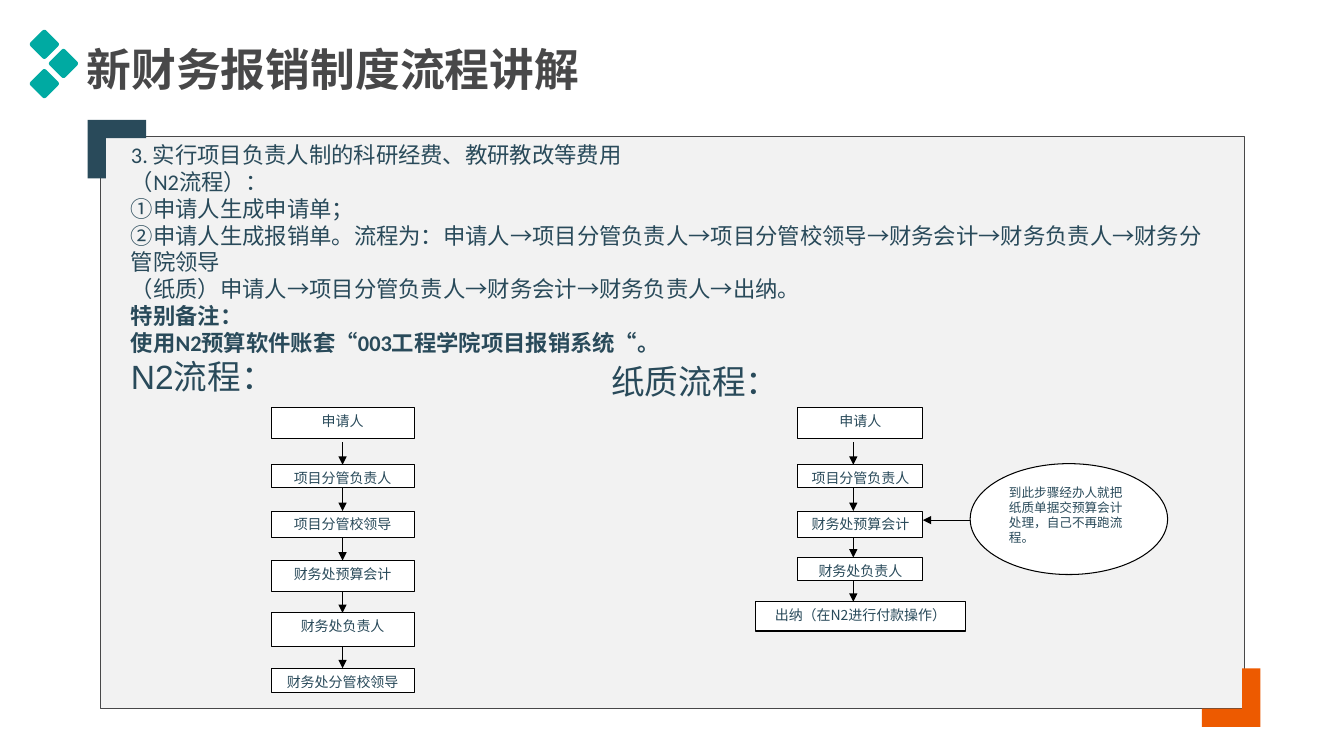
from pptx import Presentation
from pptx.dml.color import RGBColor
from pptx.enum.shapes import MSO_CONNECTOR, MSO_SHAPE
from pptx.enum.text import MSO_ANCHOR, MSO_AUTO_SIZE, PP_ALIGN
from pptx.oxml.ns import qn
from pptx.util import Inches, Pt
from lxml import etree

STRAIGHT = MSO_CONNECTOR.STRAIGHT
RECTANGLE, OVAL = MSO_SHAPE.RECTANGLE, MSO_SHAPE.OVAL
ROUNDED = MSO_SHAPE.ROUNDED_RECTANGLE
TOP, MIDDLE = MSO_ANCHOR.TOP, MSO_ANCHOR.MIDDLE
LEFT, CENTER = PP_ALIGN.LEFT, PP_ALIGN.CENTER
NO_FIT = MSO_AUTO_SIZE.NONE

COLORS = {
    "title": "484849", "teal": "00AAA2", "panel": "F2F2F2", "navy": "294A5A",
    "orange": "ED5A00", "white": "FFFFFF", "black": "000000",
}
CJK = "Noto Sans CJK SC"
LINE_PITCH = 1.2
ARROW_GAP = 0.04

POLICY = [
    ("3. 实行项目负责人制的科研经费、教研教改等费用", 16, "Calibri", False),
    ("（N2流程）：", 16, "Calibri", False),
    ("①申请人生成申请单；", 16, "Calibri", False),
    ("②申请人生成报销单。流程为：申请人→项目分管负责人→项目分管校领导→财务会计→财务负责人→财务分管院领导",
     16, "Calibri", False),
    ("（纸质）申请人→项目分管负责人→财务会计→财务负责人→出纳。", 16, "Calibri", False),
    ("特别备注：", 16, "Calibri", True),
    ("使用N2预算软件账套“003工程学院项目报销系统“。", 16, "Calibri", True),
    ("N2流程：", 24, "Arial", False),
]
SYSTEM_STEPS = [
    ("申请人", 0, 0.31, 1.42), ("项目分管负责人", 0.57, 0.23, 1.42),
    ("项目分管校领导", 1.03, 0.26, 1.42), ("财务处预算会计", 1.52, 0.31, 1.42),
    ("财务处负责人", 2.04, 0.33, 1.42), ("财务处分管校领导", 2.59, 0.24, 1.42),
]
PAPER_STEPS = [
    ("申请人", 0, 0.31, 1.24), ("项目分管负责人", 0.57, 0.23, 1.24),
    ("财务处预算会计", 1.03, 0.26, 1.24), ("财务处负责人", 1.49, 0.23, 1.24),
    ("出纳（在N2进行付款操作）", 1.93, 0.29, 2.09),
]


def color(name):
    return RGBColor.from_string(COLORS[name])


def place(holder, box):
    holder.left, holder.top, holder.width, holder.height = map(Inches, box)


def paint(shape, fill, line=None):
    shape.shadow.inherit = False
    shape.fill.solid()
    shape.fill.fore_color.rgb = color(fill)
    if line:
        shape.line.color.rgb = color(line)
        shape.line.width = Pt(0.75)
    else:
        shape.line.fill.background()


def write(paragraph, text, size, font=CJK, bold=False, ink="navy", align=LEFT):
    paragraph.alignment = align
    paragraph.space_before = Pt(0)
    paragraph.line_spacing = Pt(size * LINE_PITCH)
    run = paragraph.add_run()
    run.text = text
    run.font.size = Pt(size)
    run.font.name = font
    run.font.bold = bold
    run.font.color.rgb = color(ink)
    east_asian = etree.SubElement(run.font._element, qn("a:ea"))
    east_asian.set("typeface", CJK)


def prepare(frame, anchor=TOP):
    frame.word_wrap = True
    frame.auto_size = NO_FIT
    frame.vertical_anchor = anchor


def add_box(slide, kind, box, text, size, align):
    shape = slide.shapes.add_shape(kind, *map(Inches, box))
    paint(shape, "white", "black")
    prepare(shape.text_frame)
    write(shape.text_frame.paragraphs[0], text, size, align=align)
    return shape


def add_arrow(slide, start, end):
    arrow = slide.shapes.add_connector(STRAIGHT, *map(Inches, start + end))
    arrow.line.color.rgb = color("black")
    arrow.line.width = Pt(0.75)
    head = etree.SubElement(arrow.line._get_or_add_ln(), qn("a:tailEnd"))
    head.set("type", "triangle")
    etree.SubElement(arrow._element.spPr, qn("a:effectLst"))
    return arrow


def add_heading(slide, box):
    left, top, width, height = box
    title = slide.shapes.title
    place(title, (left + 0.47, top + 0.07, width - 0.47, 0.64))
    prepare(title.text_frame, MIDDLE)
    write(title.text_frame.paragraphs[0], "新财务报销制度流程讲解", 32,
          bold=True, ink="title")
    side = 0.22
    for center_x, center_y in ((0.15, 0.15), (0.34, 0.34), (0.15, 0.54)):
        diamond = slide.shapes.add_shape(
            ROUNDED, Inches(left + center_x - side / 2),
            Inches(top + center_y - side / 2), Inches(side), Inches(side))
        diamond.adjustments[0] = 0.12
        diamond.rotation = 45
        paint(diamond, "teal")


def add_bracket(slide, corner_x, corner_y, direction, fill):
    arm, thick = 0.58, 0.18
    outline = [(0, 0), (arm, 0), (arm, thick), (thick, thick), (thick, arm), (0, arm)]
    points = [(Inches(corner_x + direction * x), Inches(corner_y + direction * y))
              for x, y in outline]
    builder = slide.shapes.build_freeform(*points[0])
    builder.add_line_segments(points[1:], close=True)
    paint(builder.convert_to_shape(), fill)


def add_policy_panel(slide, box):
    left, top, width, height = box
    policy = slide.placeholders[1]
    panel = slide.shapes.add_shape(RECTANGLE, *map(Inches, box))
    paint(panel, "panel", "title")
    policy.element.addprevious(panel.element)
    place(policy, (left + 0.2, top, width - 0.43, height - 0.09))
    frame = policy.text_frame
    prepare(frame)
    for index, (text, size, font, bold) in enumerate(POLICY):
        paragraph = frame.add_paragraph() if index else frame.paragraphs[0]
        write(paragraph, text, size, font, bold)
        properties = paragraph._p.get_or_add_pPr()
        properties.set("marL", "0")
        properties.set("indent", "0")
        etree.SubElement(properties, qn("a:buNone"))
    add_bracket(slide, left - 0.13, top - 0.16, 1, "navy")
    add_bracket(slide, left + width + 0.16, top + height + 0.18, -1, "orange")


def add_flow(slide, box, steps, arrow_shift=0):
    left, top, width, height = box
    center = left + width / 2
    arrow_x = center + arrow_shift
    previous, bottom = None, top
    for text, offset, step_height, step_width in steps:
        step_top = top + offset
        step = add_box(slide, RECTANGLE,
                       (center - step_width / 2, step_top, step_width, step_height),
                       text, 10, CENTER)
        if previous:
            is_first = bottom == top + steps[0][2]
            start_y = bottom + ARROW_GAP if is_first else bottom
            arrow = add_arrow(slide, (arrow_x, start_y), (arrow_x, step_top))
            if not arrow_shift:
                arrow.end_connect(step, 0)
                if not is_first:
                    arrow.begin_connect(previous, 2)
        previous, bottom = step, step_top + step_height


def add_paper_flow(slide, box):
    left, top, width, height = box
    heading = slide.shapes.add_textbox(*map(Inches, (left - 1.95, top - 0.51, 4.37, 0.5)))
    prepare(heading.text_frame)
    write(heading.text_frame.paragraphs[0], "纸质流程：", 24, "Arial")
    add_flow(slide, box, PAPER_STEPS, -0.07)
    note_left, arrow_y = left + width + 0.47, top + 1.12
    add_box(slide, OVAL, (note_left, top + 0.56, 1.96, 1.1),
            "到此步骤经办人就把纸质单据交预算会计处理，自己不再跑流程。", 9, LEFT)
    add_arrow(slide, (note_left, arrow_y), (left + width, arrow_y))


def main():
    deck = Presentation()
    deck.slide_width, deck.slide_height = Inches(13.34), Inches(7.5)
    slide = deck.slides.add_slide(deck.slide_layouts[1])
    add_heading(slide, (0.29, 0.29, 7.01, 0.71))
    add_policy_panel(slide, (1, 1.35, 11.35, 5.68))
    add_flow(slide, (2.69, 4.04, 1.42, 2.83), SYSTEM_STEPS)
    add_paper_flow(slide, (7.92, 4.04, 1.24, 2.22))
    deck.save("out.pptx")


if __name__ == "__main__":
    main()
